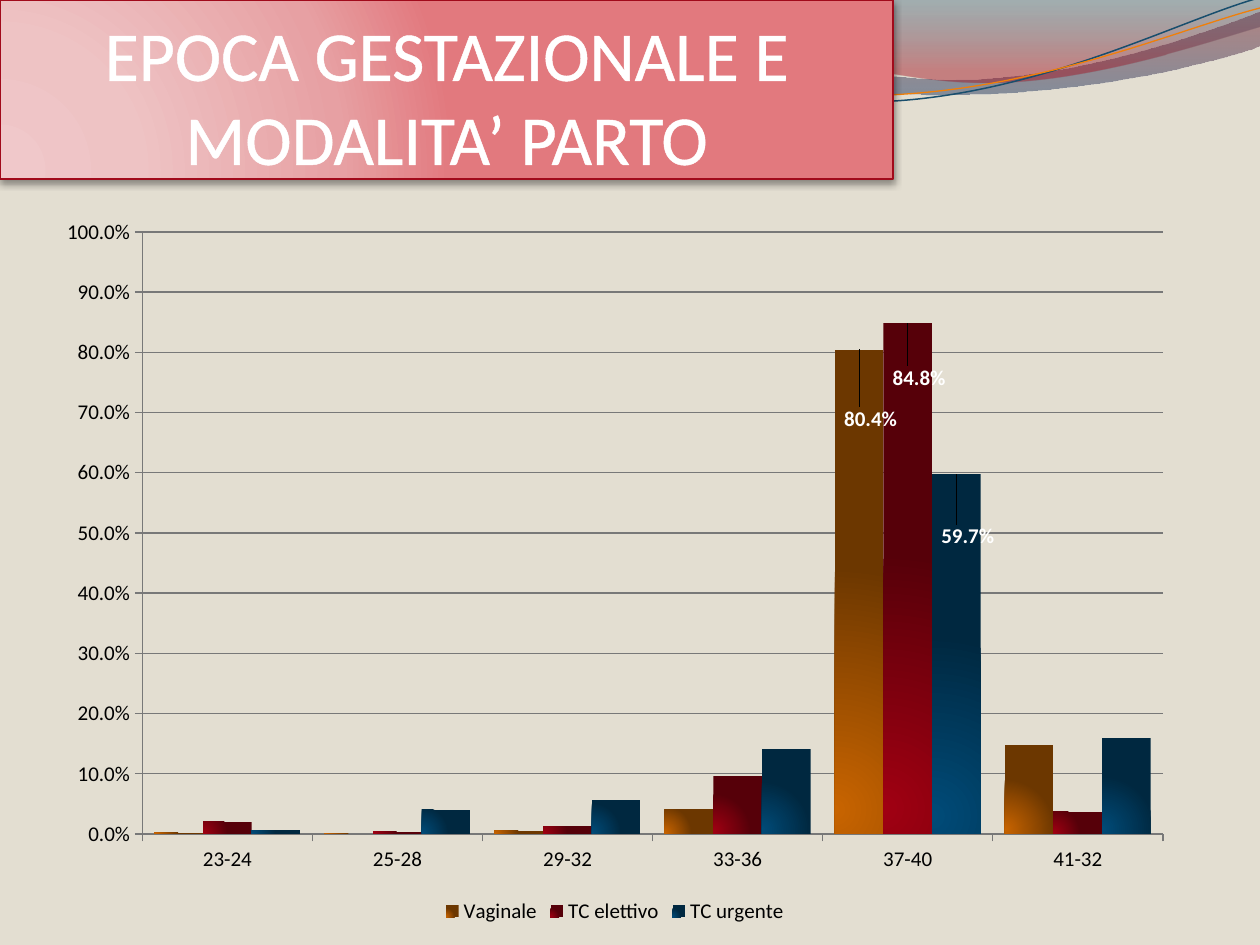
"""Builds the slide on gestational age and mode of delivery."""
from lxml import etree
from pptx import Presentation
from pptx import util as u
from pptx.chart import data
from pptx.dml.color import RGBColor
from pptx.enum import chart as ch, text
from pptx.oxml import ns, parse_xml

CREAM = RGBColor(0xE3, 0xDE, 0xD1)
WHITE = RGBColor(0xFF, 0xFF, 0xFF)
BLACK = RGBColor(0, 0, 0)
GRAY = RGBColor(0x78, 0x78, 0x78)
RED = RGBColor(0xA1, 0x0A, 0x1B)
NAVY = RGBColor(0x18, 0x4E, 0x6D)
ORANGE = RGBColor(0xF0, 0x7F, 0x09)
MAROON = RGBColor(0x7E, 0x16, 0x21)
BLUE = RGBColor(0x00, 0x56, 0x89)
DEEP_BLUE = RGBColor(0x09, 0x44, 0x67)
CRIMSON = RGBColor(0xA1, 0x0F, 0x1F)
PINKS = [(0, RGBColor(0xF0, 0xC8, 0xCA), 100), (30, RGBColor(0xEE, 0xC3, 0xC4), 100),
         (75, RGBColor(0xE7, 0xA0, 0xA3), 100), (100, RGBColor(0xE2, 0x79, 0x7E), 100)]
LINEAR = '<a:lin ang="5400000" scaled="0"/>'
RADIAL = ('<a:path path="circle"><a:fillToRect l="5000" t="100000" '
          'r="120000" b="10000"/></a:path>')

BROAD_WAVE = [(0, -0.01), (4.4, -0.01),
              (4.76, 0.17, 6.64, 0.63, 7.58, 0.63), (8.53, 0.63, 9.58, 0.26, 10, 0.09),
              (10.01, 0.36), (9.83, 0.44, 8.7, 0.76, 7.46, 0.75),
              (6.22, 0.75, 3.82, 0.28, 2.57, 0.34), (1.29, 0.35, 0.46, 0.83, -0.01, 1.13),
              (0, -0.01)]
TOP_WAVE = [(4.79, -0.01), (5.09, 0.11, 6.82, 0.62, 7.69, 0.65),
            (8.56, 0.69, 9.61, 0.32, 10, 0.21), (10, 0), (4.79, -0.01)]
NAVY_CURVE = [(-0.02, 0.88), (0.46, 0.72, 1.58, 0.41, 2.77, 0.42),
              (3.96, 0.42, 5.92, 0.93, 7.12, 0.9), (8.32, 0.87, 9.4, 0.36, 10.01, 0.22)]
ORANGE_CURVE = [(-0.02, 0.81), (0.45, 0.75, 1.64, 0.45, 2.83, 0.46),
                (4.03, 0.46, 5.96, 0.88, 7.16, 0.85), (8.36, 0.83, 9.43, 0.42, 10.02, 0.3)]

CATEGORIES = ["23-24", "25-28", "29-32", "33-36", "37-40", "41-32"]
SERIES = [
    ("Vaginale", [0.002, 0.0007, 0.005, 0.041, 0.804, 0.147],
     RGBColor(0xC8, 0x64, 0x00), RGBColor(0x6C, 0x37, 0x00), (0.01, 0.12)),
    ("TC elettivo", [0.02, 0.004, 0.013, 0.096, 0.848, 0.037],
     RGBColor(0xA0, 0x00, 0x12), RGBColor(0x56, 0x00, 0x09), (0.01, 0.1)),
    ("TC urgente", [0.006, 0.04, 0.057, 0.141, 0.597, 0.159],
     RGBColor(0x00, 0x4B, 0x78), RGBColor(0x00, 0x28, 0x40), (0.01, 0.11)),
]


class Deck:
    """Holds the style and the current slide."""

    font = "Calibri"

    def __init__(self, prs):
        self.s = prs.slides.add_slide(prs.slide_layouts[5])
        fill = self.s.background.fill
        fill.solid()
        fill.fore_color.rgb = CREAM

    def gradient(self, obj, stops, shade):
        """Fill a shape or a series format with a gradient."""
        obj.fill.solid()
        old = next(obj._element.iter(ns.qn("a:solidFill")))
        gs = "".join(f'<a:gs pos="{pos * 1000}"><a:srgbClr val="{rgb}">'
                     f'<a:alpha val="{alpha * 1000}"/></a:srgbClr></a:gs>'
                     for pos, rgb, alpha in stops)
        old.getparent().replace(old, parse_xml(
            f'<a:gradFill {ns.nsdecls("a")} rotWithShape="1"><a:gsLst>{gs}</a:gsLst>'
            f'{shade}</a:gradFill>'))

    def freeform(self, path, close):
        """Draw an outline of lines and cubic curves without a shadow."""
        pts = [(u.Inches(seg[i]), u.Inches(seg[i + 1]))
               for seg in path for i in range(0, len(seg), 2)]
        builder = self.s.shapes.build_freeform(*pts[0])
        builder.add_line_segments(pts[1:], close=close)
        sp = builder.convert_to_shape()
        sp.shadow.inherit = False
        lines = iter(list(sp._element.iter(ns.qn("a:lnTo"))))
        for seg in path[1:]:
            first = next(lines)
            if len(seg) == 6:
                bezier = etree.Element(ns.qn("a:cubicBezTo"))
                first.addprevious(bezier)
                for line in (first, next(lines), next(lines)):
                    bezier.append(line[0])
                    line.getparent().remove(line)
        return sp

    def wave(self, path, stops):
        """Draw a filled translucent wave."""
        sp = self.freeform(path, True)
        sp.line.fill.background()
        self.gradient(sp, stops, LINEAR)

    def curve(self, path, color, width):
        """Draw an open, slightly turned curved line."""
        sp = self.freeform(path, False)
        sp.rotation = 357.3
        sp.fill.background()
        sp.line.color.rgb = color
        sp.line.width = u.Pt(width)

    def title(self, words, width, height):
        """Format the title as a banner in front of the waves."""
        sp = self.s.shapes.title
        self.s.shapes._spTree.append(sp._element)
        sp.left, sp.top = u.Inches(0), u.Inches(0)
        sp.width, sp.height = u.Inches(width), u.Inches(height)
        self.gradient(sp, PINKS, RADIAL)
        sp.line.color.rgb = RED
        sp.line.width = u.Pt(1)
        sp._element.spPr.append(parse_xml(
            f'<a:effectLst {ns.nsdecls("a")}><a:outerShdw blurRad="50800" dist="25400" '
            'dir="5400000" rotWithShape="0"><a:srgbClr val="000000"><a:alpha val="40000"/>'
            '</a:srgbClr></a:outerShdw></a:effectLst>'))
        tf = sp.text_frame
        tf.word_wrap = True
        tf.auto_size = text.MSO_AUTO_SIZE.NONE
        tf.vertical_anchor = text.MSO_ANCHOR.BOTTOM
        tf.margin_left = tf.margin_right = tf.margin_bottom = 0
        tf.margin_top = u.Inches(0.05)
        p = tf.paragraphs[0]
        p.alignment = text.PP_ALIGN.CENTER
        r = p.add_run()
        r.text = words
        self.style(r.font, 40, WHITE)
        r.font._element.insert(0, parse_xml(
            f'<a:ln {ns.nsdecls("a")} w="{u.Pt(1.45)}"><a:solidFill>'
            f'<a:srgbClr val="{WHITE}"/></a:solidFill></a:ln>'))

    def style(self, font, size, color, bold=False):
        """Apply the slide's typeface."""
        font.name, font.size, font.bold = self.font, u.Pt(size), bold
        font.color.rgb = color

    def layout(self, parent, index, **values):
        """Place a chart part by fractions of the chart."""
        for old in parent.findall(ns.qn("c:layout")):
            parent.remove(old)
        node = etree.Element(ns.qn("c:layout"))
        manual = etree.SubElement(node, ns.qn("c:manualLayout"))
        for name, value in values.items():
            etree.SubElement(manual, ns.qn(f"c:{name}")).set("val", str(value))
        parent.insert(index, node)

    def chart(self, left, top, width, height, labelled):
        """Add the clustered columns with labels on one category."""
        cd = data.CategoryChartData(number_format="0.0%")
        cd.categories = CATEGORIES
        for name, values, *_ in SERIES:
            cd.add_series(name, values)
        chart = self.s.shapes.add_chart(
            ch.XL_CHART_TYPE.COLUMN_CLUSTERED, u.Inches(left), u.Inches(top),
            u.Inches(width), u.Inches(height), cd).chart
        self.style(chart.font, 18, BLACK)
        chart.font.name = "Cambria"
        chart.has_title = False
        chart.has_legend = True
        chart.legend.position = ch.XL_LEGEND_POSITION.BOTTOM
        chart.legend.include_in_layout = False
        self.style(chart.legend.font, 12, BLACK)
        axis = chart.value_axis
        axis.minimum_scale, axis.maximum_scale, axis.major_unit = 0, 1, 0.1
        axis.has_major_gridlines = True
        axis.tick_labels.number_format = "0.0%"
        axis.tick_labels.number_format_is_linked = False
        for axis in (chart.value_axis, chart.category_axis):
            axis.major_tick_mark = ch.XL_TICK_MARK.OUTSIDE
            self.style(axis.tick_labels.font, 12, BLACK)
        for part in (chart.value_axis, chart.category_axis, chart.value_axis.major_gridlines):
            part.format.line.color.rgb = GRAY
            part.format.line.width = u.Pt(0.8)
        plot = chart.plots[0]
        plot.gap_width, plot.overlap, plot.vary_by_categories = 50, 0, False
        for ser, (_, _, light, dark, (dx, dy)) in zip(plot.series, SERIES):
            ser.invert_if_negative = False
            fmt = ser.format
            fmt._element = ser._element
            self.gradient(fmt, [(0, light, 100), (100, dark, 100)], RADIAL)
            label = ser.points[labelled].data_label
            self.style(label.font, 12, WHITE, True)
            label.position = ch.XL_LABEL_POSITION.OUTSIDE_END
            self.layout(ser._element.find(".//" + ns.qn("c:dLbl")), 1, x=dx, y=dy)
        self.layout(chart._chartSpace.chart.plotArea, 0, layoutTarget="inner", xMode="edge",
                    yMode="edge", x=(1.13 - left) / width, y=(1.84 - top) / height,
                    w=8.1 / width, h=4.78 / height)


def main():
    """Build and save the slide."""
    prs = Presentation()
    prs.slide_width, prs.slide_height = u.Inches(10), u.Inches(7.5)
    deck = Deck(prs)
    deck.wave(BROAD_WAVE, [(0, MAROON, 45), (100, BLUE, 55)])
    deck.wave(TOP_WAVE, [(0, DEEP_BLUE, 30), (80, CRIMSON, 45)])
    deck.curve(NAVY_CURVE, NAVY, 0.85)
    deck.curve(ORANGE_CURVE, ORANGE, 0.75)
    deck.title("EPOCA GESTAZIONALE E MODALITA’ PARTO", 7.09, 1.42)
    deck.chart(0.35, 1.62, 9.06, 5.75, CATEGORIES.index("37-40"))
    prs.save("out.pptx")


if __name__ == "__main__":
    main()
